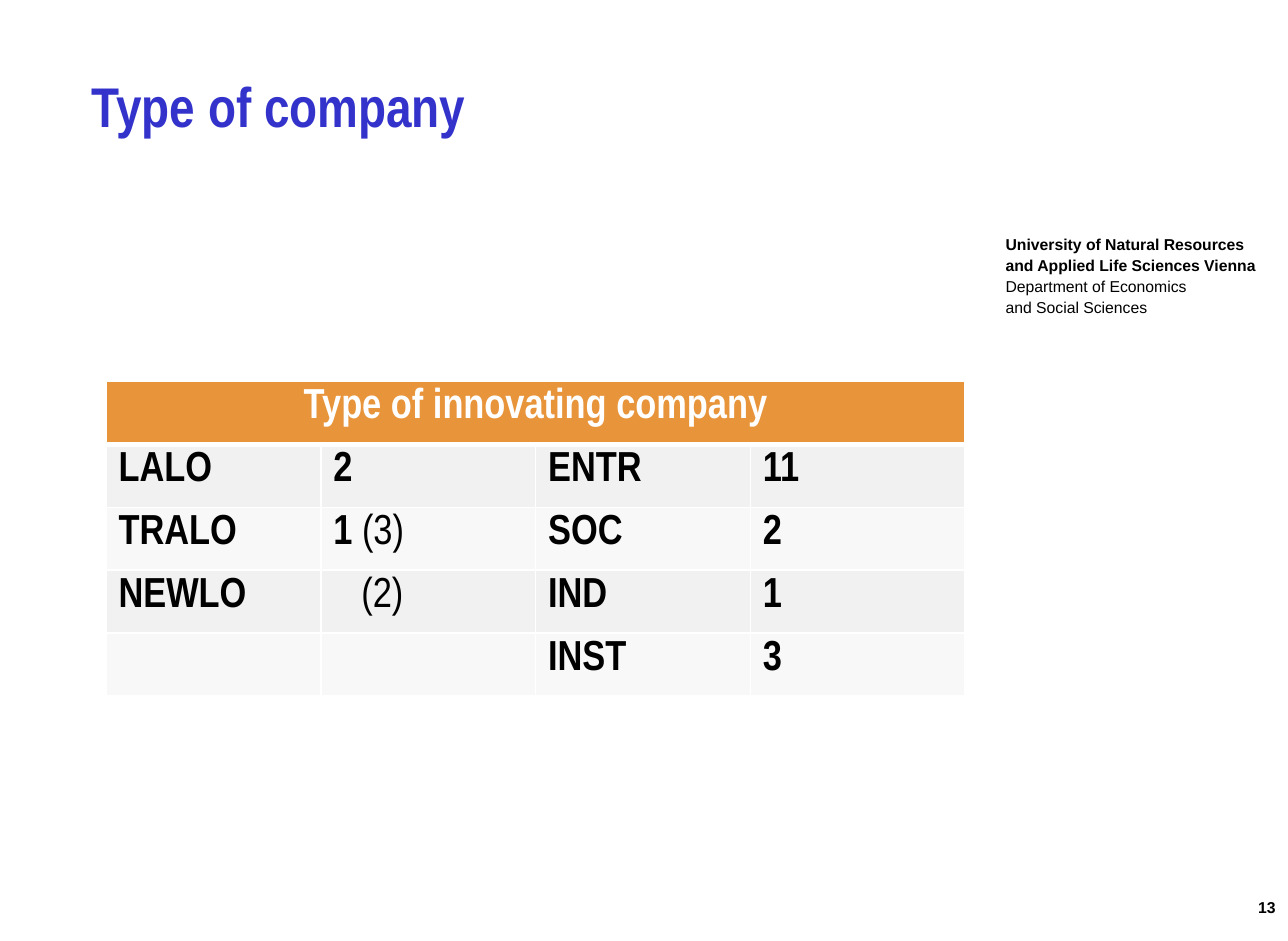
from lxml.etree import SubElement
from pptx import Presentation
from pptx.dml.color import RGBColor
from pptx.enum.text import MSO_AUTO_SIZE, PP_ALIGN
from pptx.oxml.ns import qn
from pptx.util import Cm, Pt

BLUE = RGBColor(0x33, 0x33, 0xCC)
BLACK = RGBColor(0, 0, 0)
WHITE = RGBColor(0xFF, 0xFF, 0xFF)
ORANGE = RGBColor(0xE8, 0x94, 0x3B)
BANDS = [RGBColor(0xF8, 0xF8, 0xF9), RGBColor(0xF1, 0xF1, 0xF2)]

HEAD = "Type of innovating company"
ROWS = [
    ["LALO", "2", "ENTR", "11"],
    ["TRALO", "1 (3)", "SOC", "2"],
    ["NEWLO", "(2)", "IND", "1"],
    ["", "", "INST", "3"],
]


def style(run, face, size, color, bold=True):
    font = run.font
    font.name, font.size, font.bold = face, Pt(size), bold
    font.color.rgb = color


def add_box(slide, box):
    frame = slide.shapes.add_textbox(*box).text_frame
    frame.word_wrap = True
    return frame


def add_title(slide, box):
    frame = add_box(slide, box)
    frame.auto_size = MSO_AUTO_SIZE.SHAPE_TO_FIT_TEXT
    frame.text = "Type of company"
    style(frame.paragraphs[0].runs[0], "Arial Narrow", 32, BLUE)


def add_sender(slide, box):
    """Place the name of the university and its department."""
    frame = add_box(slide, box)
    frame.auto_size = MSO_AUTO_SIZE.SHAPE_TO_FIT_TEXT
    frame.margin_left = frame.margin_right = Cm(0.3)
    frame.margin_top = frame.margin_bottom = Cm(0.15)
    school, unit = frame.paragraphs[0], frame.add_paragraph()
    school.text = "University of Natural Resources\nand Applied Life Sciences Vienna"
    unit.text = "Department of Economics\nand Social Sciences"
    for para in (school, unit):
        para.line_spacing = Pt(12)
        for run in para.runs:
            style(run, "Arial", 9, BLACK, para is school)


def add_number(slide, box):
    frame = add_box(slide, box)
    frame.text = "13"
    para = frame.paragraphs[0]
    para.alignment = PP_ALIGN.RIGHT
    style(para.runs[0], "Arial", 9, BLACK)


def set_edges(cell, top, bottom):
    """Draw white borders, with the top and bottom widths in points."""
    props = cell._tc.get_or_add_tcPr()
    for tag, width in (("lnL", 1), ("lnR", 1), ("lnT", top), ("lnB", bottom)):
        line = SubElement(props, qn(f"a:{tag}"), w=str(Pt(width)))
        fill = SubElement(line, qn("a:solidFill"))
        SubElement(fill, qn("a:srgbClr"), val=str(WHITE))


def fill_cell(cell, text, color):
    """Write a cell, with the part in brackets in regular weight."""
    main, mark, rest = text.partition("(")
    para = cell.text_frame.paragraphs[0]
    for part, bold in ((main, True), (mark + rest, False)):
        if part:
            run = para.add_run()
            run.text = part
            style(run, "Arial Narrow", 24, color, bold)
    if mark and not main:
        cell.margin_left = Cm(0.82)


def add_counts(slide, box):
    """Place the table of company types and their counts."""
    table = slide.shapes.add_table(len(ROWS) + 1, len(ROWS[0]), *box).table
    table.horz_banding = False
    for r, row in enumerate([[HEAD, "", "", ""]] + ROWS):
        for c, text in enumerate(row):
            cell = table.cell(r, c)
            set_edges(cell, 3 if r == 1 else 1, 3 if r == 0 else 1)
            cell.fill.solid()
            cell.fill.fore_color.rgb = BANDS[r % 2] if r else ORANGE
            fill_cell(cell, text, BLACK if r else WHITE)
    head = table.cell(0, 0)
    head.merge(table.cell(0, len(ROWS[0]) - 1))
    head.text_frame.paragraphs[0].alignment = PP_ALIGN.CENTER


def main():
    deck = Presentation()
    deck.slide_width, deck.slide_height = Cm(26), Cm(19)
    slide = deck.slides.add_slide(deck.slide_layouts[6])
    add_sender(slide, (Cm(20), Cm(4.55), Cm(6), Cm(2)))
    add_number(slide, (Cm(23.5), Cm(18), Cm(2.5), Cm(1)))
    add_title(slide, (Cm(1.6), Cm(1.32), Cm(18.4), Cm(1.62)))
    add_counts(slide, (Cm(2.14), Cm(7.7), Cm(17.34), Cm(5.15)))
    deck.save("out.pptx")


if __name__ == "__main__":
    main()
